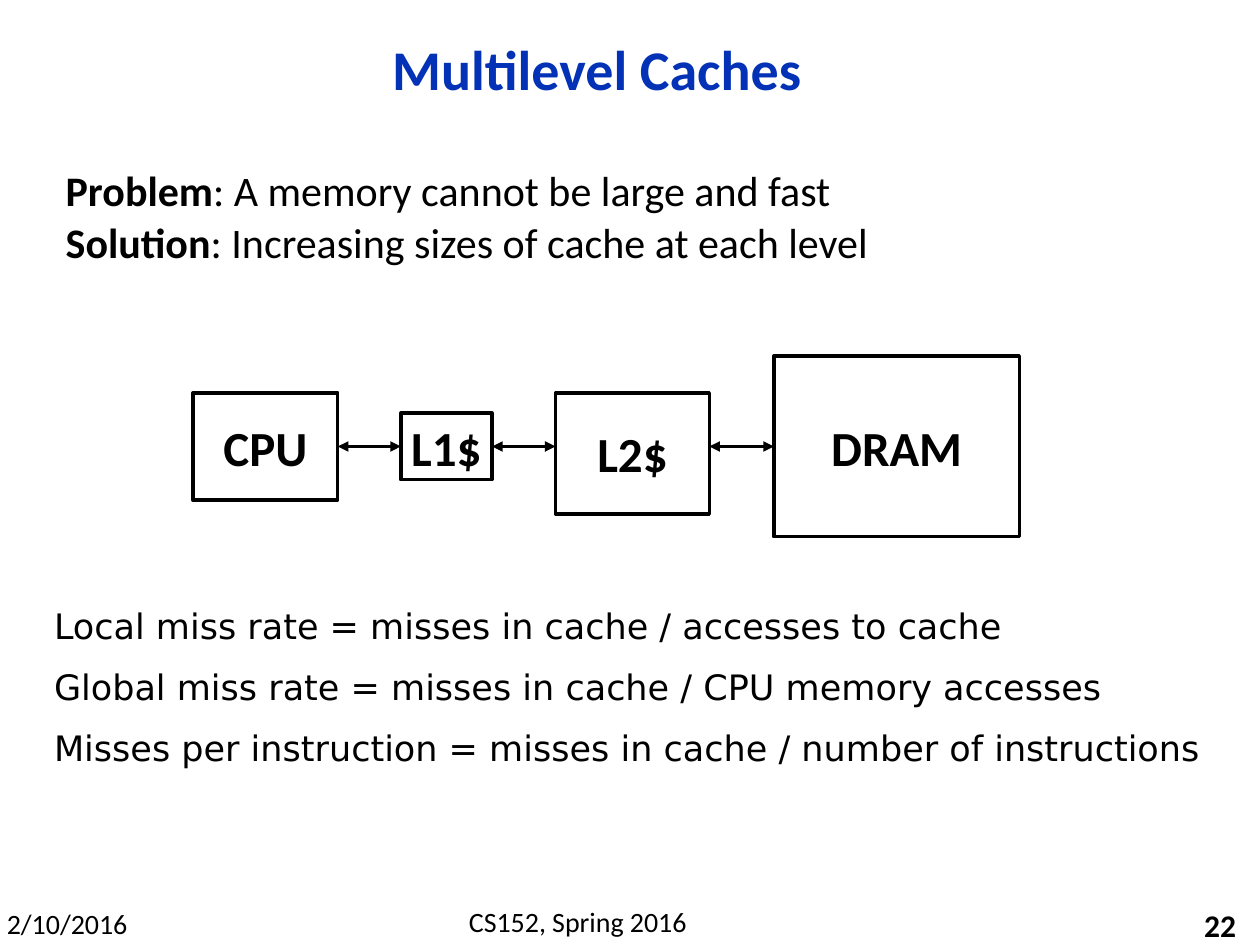
from itertools import pairwise
from lxml import etree
from pptx import Presentation
from pptx.dml.color import RGBColor
from pptx.enum.shapes import MSO_CONNECTOR, MSO_SHAPE
from pptx.enum.text import MSO_ANCHOR, MSO_AUTO_SIZE, PP_ALIGN
from pptx.oxml.ns import qn
from pptx.util import Cm, Pt

LEFT, MID, RIGHT = PP_ALIGN.LEFT, PP_ALIGN.CENTER, PP_ALIGN.RIGHT
TOP, CENTER = MSO_ANCHOR.TOP, MSO_ANCHOR.MIDDLE
RECT, LINE = MSO_SHAPE.RECTANGLE, MSO_CONNECTOR.STRAIGHT
NO_FIT = MSO_AUTO_SIZE.NONE
WEST, EAST = 1, 3  # connection sites of a rectangle

COLORS = {"ink": "000000", "title": "0332B7", "paper": "FFFFFF"}
SANS, WIDE = "Calibri", "DejaVu Sans"

TITLE = "Multilevel Caches"
POINTS = [
    [("Problem", True), (": A memory cannot be large and fast", False)],
    [("Solution", True), (": Increasing sizes of cache at each level", False)],
]
RATES = [
    "Local miss rate = misses in cache / accesses to cache",
    "Global miss rate = misses in cache / CPU memory accesses",
    "Misses per instruction = misses in cache / number of instructions",
]
AXIS = 9.0  # height of the arrows, cm
# name, left, width, height, drop of the box centre below the axis (cm)
LEVELS = [
    ("CPU", 3.89, 2.92, 2.16, 0),
    ("L1$", 8.08, 1.84, 1.34, 0),
    ("L2$", 11.2, 3.1, 2.44, 0.14),
    ("DRAM", 15.6, 4.95, 3.64, 0),
]
# text, place (cm), format
FOOTER = [
    ("2/10/2016", (-0.13, 18.16, 2.97, 0.94), dict(size=16, align=MID, wrap=False)),
    ("CS152, Spring 2016", (7.42, 18.11, 8.46, 0.94), dict(size=16, align=MID)),
    ("22", (19.89, 18.24, 5.28, 0.81),
     dict(size=18, bold=True, align=RIGHT, anchor=CENTER, wrap=False)),
]


def rgb(name):
    return RGBColor.from_string(COLORS[name])


def write(shape, paras, size=20, font=SANS, color="ink", bold=False,
          align=LEFT, anchor=TOP, wrap=True, lines=None, before=0, hang=None):
    """Fill a shape; each paragraph is a string or a list of (text, bold)."""
    frame = shape.text_frame
    frame.auto_size = NO_FIT
    frame.word_wrap = wrap
    frame.vertical_anchor = anchor
    for i, runs in enumerate(paras):
        para = frame.add_paragraph() if i else frame.paragraphs[0]
        para.alignment = align
        para.line_spacing = lines
        para.space_before = Pt(before)
        if hang:
            props = para._p.get_or_add_pPr()
            props.set("marL", str(Cm(hang)))
            props.set("indent", str(-Cm(hang)))
            etree.SubElement(props, qn("a:buNone"))
        for text, heavy in [(runs, bold)] if isinstance(runs, str) else runs:
            run = para.add_run()
            run.text = text
            run.font.name, run.font.size = font, Pt(size)
            run.font.bold = heavy
            run.font.color.rgb = rgb(color)


def place(shape, *box):
    shape.left, shape.top, shape.width, shape.height = map(Cm, box)


def add_box(slide, name, left, width, height, drop):
    top = AXIS + drop - height / 2
    box = slide.shapes.add_shape(RECT, *map(Cm, (left, top, width, height)))
    box.shadow.inherit = False
    box.fill.solid()
    box.fill.fore_color.rgb = rgb("paper")
    box.line.color.rgb = rgb("ink")
    box.line.width = Pt(2)
    write(box, [name], size=28, bold=True, align=MID, anchor=CENTER, wrap=False)
    return box


def add_arrow(slide, start, end):
    """Draw a level double arrow, joined to boxes centred on the axis."""
    (first, one), (last, two) = start, end
    arrow = slide.shapes.add_connector(
        LINE, first.left + first.width, Cm(AXIS), last.left, Cm(AXIS))
    if not one[-1]:
        arrow.begin_connect(first, EAST)
    if not two[-1]:
        arrow.end_connect(last, WEST)
    arrow.line.color.rgb = rgb("ink")
    arrow.line.width = Pt(2)
    stroke = arrow.line._get_or_add_ln()
    for tip in ("a:headEnd", "a:tailEnd"):
        etree.SubElement(stroke, qn(tip), type="triangle")
    etree.SubElement(arrow._element.spPr, qn("a:effectLst"))


def main():
    deck = Presentation()
    deck.slide_width, deck.slide_height = Cm(25.4), Cm(19.05)
    slide = deck.slides.add_slide(deck.slide_layouts[1])

    title, body = slide.placeholders
    place(title, 1.9, 0.43, 20.27, 2.06)
    write(title, [TITLE], size=32, color="title", bold=True,
          align=MID, anchor=CENTER, lines=0.9)
    place(body, 1.07, 3.38, 21.59, 2.54)
    write(body, POINTS, size=24, lines=0.8, before=7, hang=0.64)

    boxes = [(add_box(slide, *level), level) for level in LEVELS]
    for start, end in pairwise(boxes):
        add_arrow(slide, start, end)

    rates = slide.shapes.add_textbox(*map(Cm, (0.84, 12.07, 23.83, 3.63)))
    write(rates, RATES, font=WIDE, before=10.7)
    for text, box, style in FOOTER:
        write(slide.shapes.add_textbox(*map(Cm, box)), [text], **style)

    deck.save("out.pptx")


if __name__ == "__main__":
    main()
